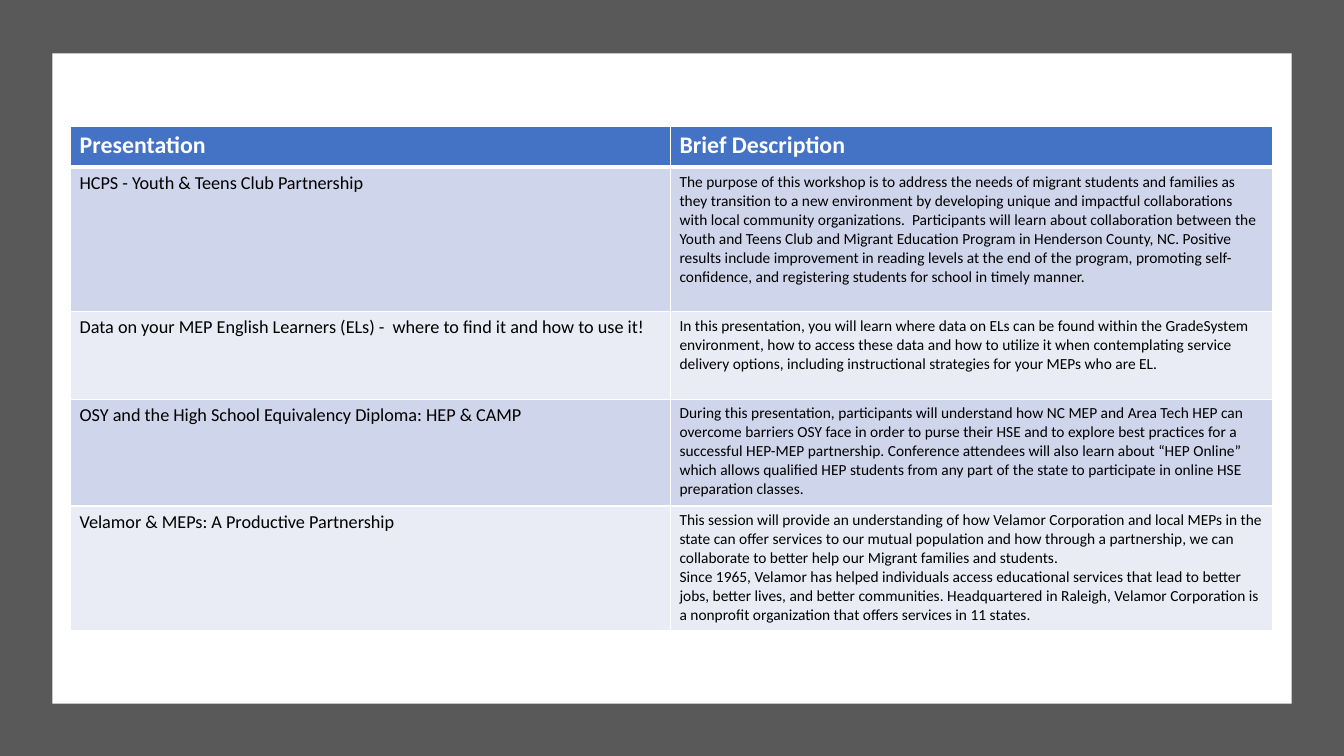
"""Builds a slide with a table of conference presentations and their descriptions."""
from lxml.etree import SubElement
from pptx import Presentation
from pptx.dml.color import RGBColor
from pptx.enum.shapes import MSO_SHAPE as SHAPE
from pptx.oxml.ns import qn
from pptx.util import Inches, Pt

WHITE = RGBColor(0xFF, 0xFF, 0xFF)
BLACK = RGBColor(0x00, 0x00, 0x00)
GRAY = RGBColor(0x59, 0x59, 0x59)
BLUE = RGBColor(0x44, 0x72, 0xC4)
BAND_DARK = RGBColor(0xCF, 0xD5, 0xEA)
BAND_LIGHT = RGBColor(0xE9, 0xEB, 0xF5)

COL_WIDTHS = [5.95, 5.97]
ROW_HEIGHTS = [0.41, 1.43, 0.87, 1.06, 1.24]
ROWS = [
    ("Presentation", "Brief Description"),
    ("HCPS - Youth & Teens Club Partnership",
     "The purpose of this workshop is to address the needs of migrant students and families as "
     "they transition to a new environment by developing unique and impactful collaborations "
     "with local community organizations.  Participants will learn about collaboration between "
     "the Youth and Teens Club and Migrant Education Program in Henderson County, NC. Positive "
     "results include improvement in reading levels at the end of the program, promoting "
     "self-confidence, and registering students for school in timely manner."),
    ("Data on your MEP English Learners (ELs) -  where to find it and how to use it!",
     "In this presentation, you will learn where data on ELs can be found within the GradeSystem "
     "environment, how to access these data and how to utilize it when contemplating service "
     "delivery options, including instructional strategies for your MEPs who are EL."),
    ("OSY and the High School Equivalency Diploma: HEP & CAMP",
     "During this presentation, participants will understand how NC MEP and Area Tech HEP can "
     "overcome barriers OSY face in order to purse their HSE and to explore best practices for a "
     "successful HEP-MEP partnership. Conference attendees will also learn about “HEP Online” "
     "which allows qualified HEP students from any part of the state to participate in online "
     "HSE preparation classes."),
    ("Velamor & MEPs: A Productive Partnership",
     "This session will provide an understanding of how Velamor Corporation and local MEPs in "
     "the state can offer services to our mutual population and how through a partnership, we "
     "can collaborate to better help our Migrant families and students.\n"
     "Since 1965, Velamor has helped individuals access educational services that lead to better "
     "jobs, better lives, and better communities. Headquartered in Raleigh, Velamor Corporation "
     "is a nonprofit organization that offers services in 11 states."),
]


def write_text(tf, text, size, color=BLACK, bold=False):
    tf.text = text
    for p in tf.paragraphs:
        for r in p.runs:
            r.font.name = "Calibri"
            r.font.size = Pt(size)
            r.font.bold = bold
            r.font.color.rgb = color


def add_border(cell, side, width):
    ln = SubElement(cell._tc.get_or_add_tcPr(), qn(f"a:ln{side}"), w=str(Pt(width)))
    fill = SubElement(ln, qn("a:solidFill"))
    SubElement(fill, qn("a:srgbClr"), val=str(WHITE))


prs = Presentation()
prs.slide_width, prs.slide_height = Inches(13.33), Inches(7.5)
s = prs.slides.add_slide(prs.slide_layouts[6])

for box, color in [((0, 0, 13.33, 7.5), GRAY), ((0.52, 0.53, 12.29, 6.45), WHITE)]:
    sp = s.shapes.add_shape(SHAPE.RECTANGLE, *map(Inches, box))
    sp.shadow.inherit = False
    sp.fill.solid()
    sp.fill.fore_color.rgb = color
    sp.line.fill.background()

table = s.shapes.add_table(len(ROWS), len(COL_WIDTHS), Inches(0.7), Inches(1.25),
                           Inches(sum(COL_WIDTHS)), Inches(sum(ROW_HEIGHTS))).table
for column, width in zip(table.columns, COL_WIDTHS):
    column.width = Inches(width)

for i, (row, height) in enumerate(zip(ROWS, ROW_HEIGHTS)):
    table.rows[i].height = Inches(height)
    for j, text in enumerate(row):
        cell = table.cell(i, j)
        cell.margin_left = cell.margin_right = Inches(0.09)
        cell.margin_top = cell.margin_bottom = Inches(0.05)
        for side in "LRTB":
            add_border(cell, side, 3 if (i, side) in [(0, "B"), (1, "T")] else 1)
        cell.fill.solid()
        if i == 0:
            cell.fill.fore_color.rgb = BLUE
            write_text(cell.text_frame, text, size=17, color=WHITE, bold=True)
        else:
            cell.fill.fore_color.rgb = BAND_DARK if i % 2 else BAND_LIGHT
            write_text(cell.text_frame, text, size=11 if j else 13)

prs.save("out.pptx")
